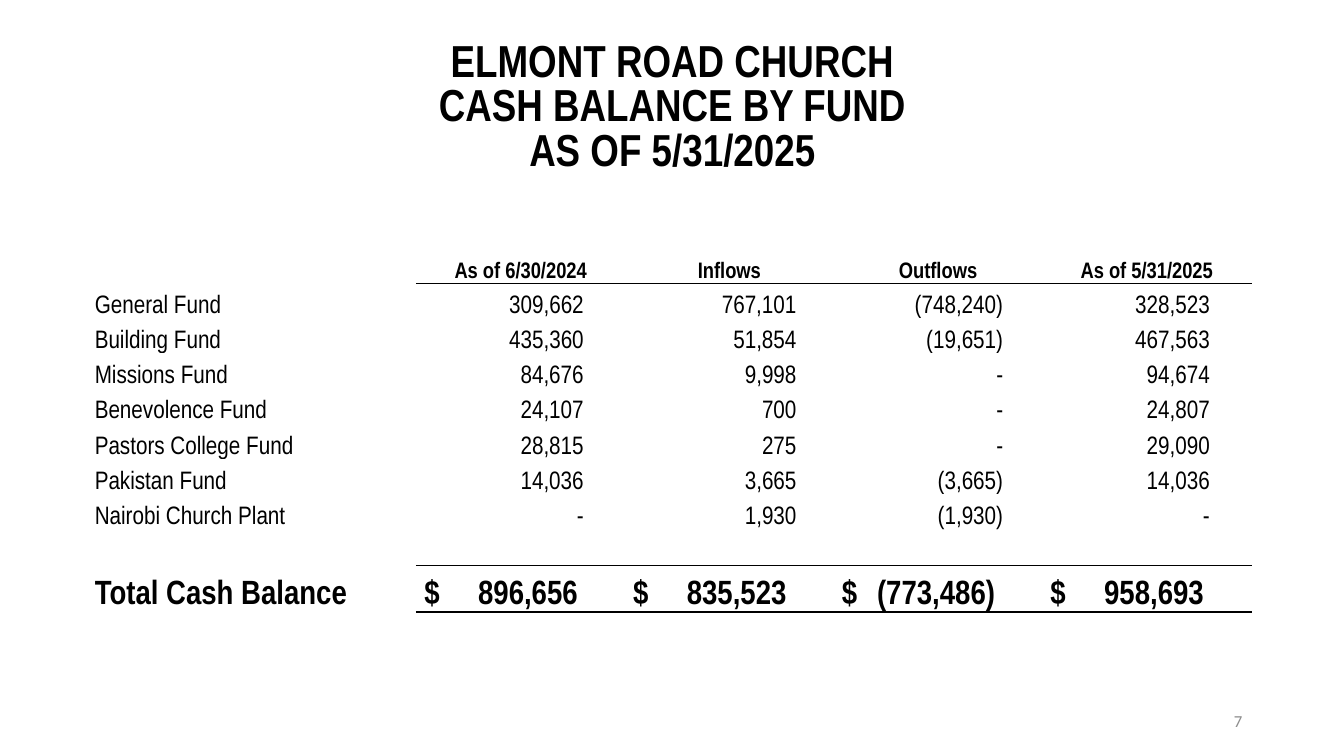
from lxml.etree import SubElement
from pptx import Presentation
from pptx.dml.color import RGBColor
from pptx.enum.text import MSO_ANCHOR as Anchor, PP_ALIGN as Align
from pptx.oxml import parse_xml
from pptx.oxml.ns import nsdecls, qn
from pptx.util import Inches, Pt

BLACK = RGBColor(0x00, 0x00, 0x00)
GRAY = RGBColor(0x8C, 0x8C, 0x8C)
TABLE_FONT = "Arial Narrow"
NUMBER_FONT = "Calibri"

SLIDE_WIDTH, SLIDE_HEIGHT = 13.33, 7.5
TABLE_BOX = (0.93, 0.4, 11.48, 5.67)
NUMBER_BOX = (9.42, 6.95, 3, 0.4)

LABEL_WIDTH, AMOUNT_WIDTH = 3.2, 2.07
TITLE_HEIGHT, HEADER_HEIGHT, ROW_HEIGHT, TOTAL_HEIGHT = 0.44, 0.74, 0.35, 0.46
INSET = 0.01
AMOUNT_INSETS = (0.41, 0.37, 0.39, 0.41)
DOLLAR_INSET = 0.08
TOTAL_TAB = 1.52

TITLES = ("ELMONT ROAD CHURCH", "CASH BALANCE BY FUND", "AS OF 5/31/2025")
HEADERS = ("As of 6/30/2024", "Inflows", "Outflows", "As of 5/31/2025")
FUNDS = (
    ("General Fund", "309,662", "767,101", "(748,240)", "328,523"),
    ("Building Fund", "435,360", "51,854", "(19,651)", "467,563"),
    ("Missions Fund", "84,676", "9,998", "-", "94,674"),
    ("Benevolence Fund", "24,107", "700", "-", "24,807"),
    ("Pastors College Fund", "28,815", "275", "-", "29,090"),
    ("Pakistan Fund", "14,036", "3,665", "(3,665)", "14,036"),
    ("Nairobi Church Plant", "-", "1,930", "(1,930)", "-"),
)
TOTALS = ("896,656", "835,523", "(773,486)", "958,693")

HEADER_ROW = len(TITLES) + 1
FIRST_FUND_ROW = HEADER_ROW + 1
SPACER_ROW = FIRST_FUND_ROW + len(FUNDS)
TOTAL_ROW = SPACER_ROW + 1


def write(text_frame, text, size=18, bold=False, color=BLACK, font=TABLE_FONT,
          align=Align.LEFT, spacing=None):
    paragraph = text_frame.paragraphs[0]
    paragraph.alignment = align
    paragraph.line_spacing = spacing
    run = paragraph.add_run()
    run.text = text
    run.font.name = font
    run.font.size = Pt(size)
    run.font.bold = bold
    run.font.color.rgb = color
    return paragraph


def add_right_tab(paragraph, position):
    properties = paragraph._p.get_or_add_pPr()
    tabs = SubElement(properties, qn("a:tabLst"))
    SubElement(tabs, qn("a:tab"), pos=str(Inches(position)), algn="r")


def add_border(cell, side, width):
    border = parse_xml(
        f'<a:{side} {nsdecls("a")} w="{Pt(width)}"><a:solidFill>'
        f'<a:srgbClr val="{BLACK}"/></a:solidFill></a:{side}>')
    cell._tc.get_or_add_tcPr().insert(0, border)


def rule_below(table, row, width):
    for column in range(1, len(table.columns)):
        add_border(table.cell(row, column), "lnB", width)
        if row + 1 < len(table.rows):
            add_border(table.cell(row + 1, column), "lnT", width)


def create_table(slide, box):
    heights = ([TITLE_HEIGHT] * len(TITLES) + [ROW_HEIGHT, HEADER_HEIGHT]
               + [ROW_HEIGHT] * (len(FUNDS) + 1) + [TOTAL_HEIGHT])
    widths = [LABEL_WIDTH] + [AMOUNT_WIDTH] * len(HEADERS)
    table = slide.shapes.add_table(
        len(heights), len(widths), *map(Inches, box)).table
    table.first_row = False
    table.horz_banding = False
    for row, height in zip(table.rows, heights):
        row.height = Inches(height)
    for column, width in zip(table.columns, widths):
        column.width = Inches(width)
    for cell in table.iter_cells():
        cell.fill.background()
        cell.vertical_anchor = Anchor.BOTTOM
        cell.margin_left = cell.margin_right = cell.margin_top = Inches(INSET)
        cell.margin_bottom = 0
    return table


def add_balance_table(slide, box):
    table = create_table(slide, box)
    for row, title in enumerate(TITLES):
        cell = table.cell(row, 0)
        cell.merge(table.cell(row, len(HEADERS)))
        write(cell.text_frame, title, size=32, bold=True, align=Align.CENTER,
              spacing=0.85)
    for column, header in enumerate(HEADERS, 1):
        write(table.cell(HEADER_ROW, column).text_frame, header, size=16,
              bold=True, align=Align.CENTER)
    for row, (fund, *amounts) in enumerate(FUNDS, FIRST_FUND_ROW):
        write(table.cell(row, 0).text_frame, fund)
        for column, amount in enumerate(amounts, 1):
            cell = table.cell(row, column)
            cell.margin_right = Inches(AMOUNT_INSETS[column - 1])
            write(cell.text_frame, amount, align=Align.RIGHT)
    write(table.cell(TOTAL_ROW, 0).text_frame, "Total Cash Balance", size=24,
          bold=True)
    for column, total in enumerate(TOTALS, 1):
        cell = table.cell(TOTAL_ROW, column)
        cell.margin_left = Inches(DOLLAR_INSET)
        paragraph = write(cell.text_frame, f"$\t{total}", size=24, bold=True)
        add_right_tab(paragraph, TOTAL_TAB)
    for row, width in ((TOTAL_ROW, 2), (SPACER_ROW, 0.5), (HEADER_ROW, 0.5)):
        rule_below(table, row, width)


def add_slide_number(slide, box):
    text_frame = slide.shapes.add_textbox(*map(Inches, box)).text_frame
    text_frame.word_wrap = True
    text_frame.vertical_anchor = Anchor.MIDDLE
    write(text_frame, "7", size=12, color=GRAY, font=NUMBER_FONT,
          align=Align.RIGHT)


def main():
    presentation = Presentation()
    presentation.slide_width = Inches(SLIDE_WIDTH)
    presentation.slide_height = Inches(SLIDE_HEIGHT)
    slide = presentation.slides.add_slide(presentation.slide_layouts[6])
    add_balance_table(slide, TABLE_BOX)
    add_slide_number(slide, NUMBER_BOX)
    presentation.save("out.pptx")


if __name__ == "__main__":
    main()
